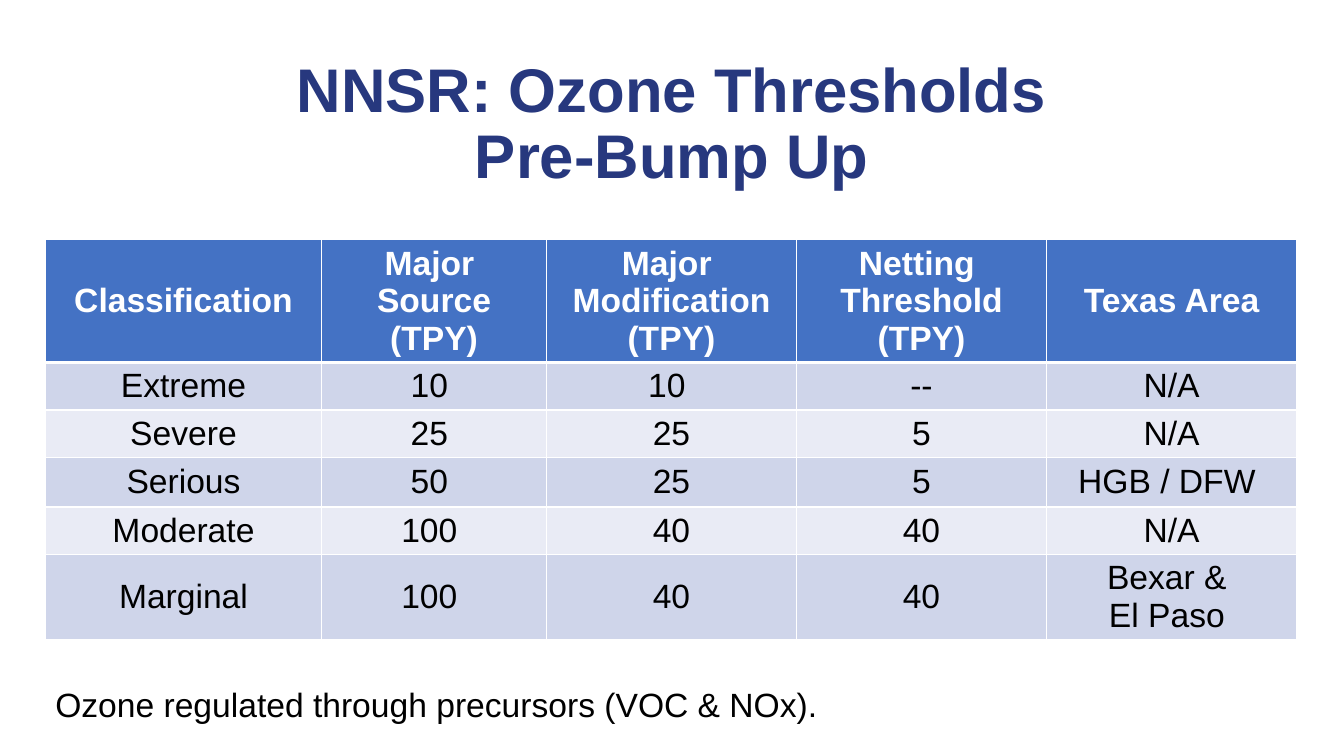
from dataclasses import dataclass

from lxml.etree import SubElement
from pptx import Presentation
from pptx.dml.color import RGBColor as RGB
from pptx.enum.text import MSO_ANCHOR as Anchor, MSO_AUTO_SIZE as Fit, PP_ALIGN as Align
from pptx.oxml.ns import qn
from pptx.util import Inches, Pt


@dataclass(frozen=True)
class Theme:
    font: str = "Arial"
    navy: str = "27387E"
    blue: str = "4472C4"
    dark: str = "CFD5EA"
    light: str = "E9EBF5"
    white: str = "FFFFFF"
    black: str = "000000"
    head: int = 44
    text: int = 24


THEME = Theme()

WIDTHS = [2.74, 2.23, 2.48, 2.48, 2.48]
HEIGHTS = [0.73, 0.41, 0.41, 0.49, 0.41, 0.41]
ROWS = [
    ["Classification", "Major \nSource (TPY)", "Major \nModification (TPY)",
     "Netting \nThreshold (TPY)", "Texas Area"],
    ["Extreme", "10 ", "10 ", "--", "N/A"],
    ["Severe", "25 ", "25", "5", "N/A"],
    ["Serious", "50 ", "25", "5", "HGB / DFW "],
    ["Moderate", "100 ", "40", "40", "N/A"],
    ["Marginal", "100 ", "40", "40", "Bexar & \nEl Paso "],
]


def style(frame, size, color, bold=False, align=Align.LEFT):
    for para in frame.paragraphs:
        para.alignment = align
        font = para.font
        font.name, font.size, font.bold = THEME.font, Pt(size), bold
        font.color.rgb = RGB.from_string(color)


def place(shape, left, top, width, height):
    shape.left, shape.top = Inches(left), Inches(top)
    shape.width, shape.height = Inches(width), Inches(height)


def add_title(slide, text):
    title = slide.shapes.title
    place(title, 0.67, 0.52, 11.99, 1.45)
    frame = title.text_frame
    frame.text = text
    frame.auto_size = Fit.NONE
    frame.vertical_anchor = Anchor.MIDDLE
    style(frame, THEME.head, THEME.navy, True, Align.CENTER)
    frame.paragraphs[0].line_spacing = 0.9


def add_edges(cell, row):
    # The rule below the header is thicker than the rest
    widths = {"L": 1, "R": 1, "T": 3 if row == 1 else 1, "B": 3 if row == 0 else 1}
    props = cell._tc.get_or_add_tcPr()
    for side, width in widths.items():
        line = SubElement(props, qn(f"a:ln{side}"), w=str(Pt(width)))
        fill = SubElement(line, qn("a:solidFill"))
        SubElement(fill, qn("a:srgbClr"), val=THEME.white)


def fill_cell(cell, text, row):
    header = row == 0
    cell.text = text
    cell.vertical_anchor = Anchor.MIDDLE
    add_edges(cell, row)
    cell.fill.solid()
    band = THEME.dark if row % 2 else THEME.light
    cell.fill.fore_color.rgb = RGB.from_string(THEME.blue if header else band)
    color = THEME.white if header else THEME.black
    style(cell.text_frame, THEME.text, color, header, Align.CENTER)


def add_grid(slide):
    grid = slide.shapes.add_table(
        len(ROWS), len(WIDTHS), Inches(0.45), Inches(2.38),
        Inches(sum(WIDTHS)), Inches(sum(HEIGHTS))).table
    for col, width in zip(grid.columns, WIDTHS):
        col.width = Inches(width)
    for line, height in zip(grid.rows, HEIGHTS):
        line.height = Inches(height)
    for row, texts in enumerate(ROWS):
        for col, text in enumerate(texts):
            fill_cell(grid.cell(row, col), text, row)


def add_note(slide, text):
    box = slide.shapes.add_textbox(Inches(0.45), Inches(6.74), Inches(8.96), Inches(0.5))
    frame = box.text_frame
    frame.word_wrap = True
    frame.auto_size = Fit.SHAPE_TO_FIT_TEXT
    frame.text = text
    style(frame, THEME.text, THEME.black)


def main():
    deck = Presentation()
    deck.slide_width, deck.slide_height = Inches(13.33), Inches(7.5)
    slide = deck.slides.add_slide(deck.slide_layouts[5])
    add_title(slide, "NNSR: Ozone Thresholds\vPre-Bump Up")
    add_grid(slide)
    add_note(slide, "Ozone regulated through precursors (VOC & NOx).")
    deck.save("out.pptx")


if __name__ == "__main__":
    main()
